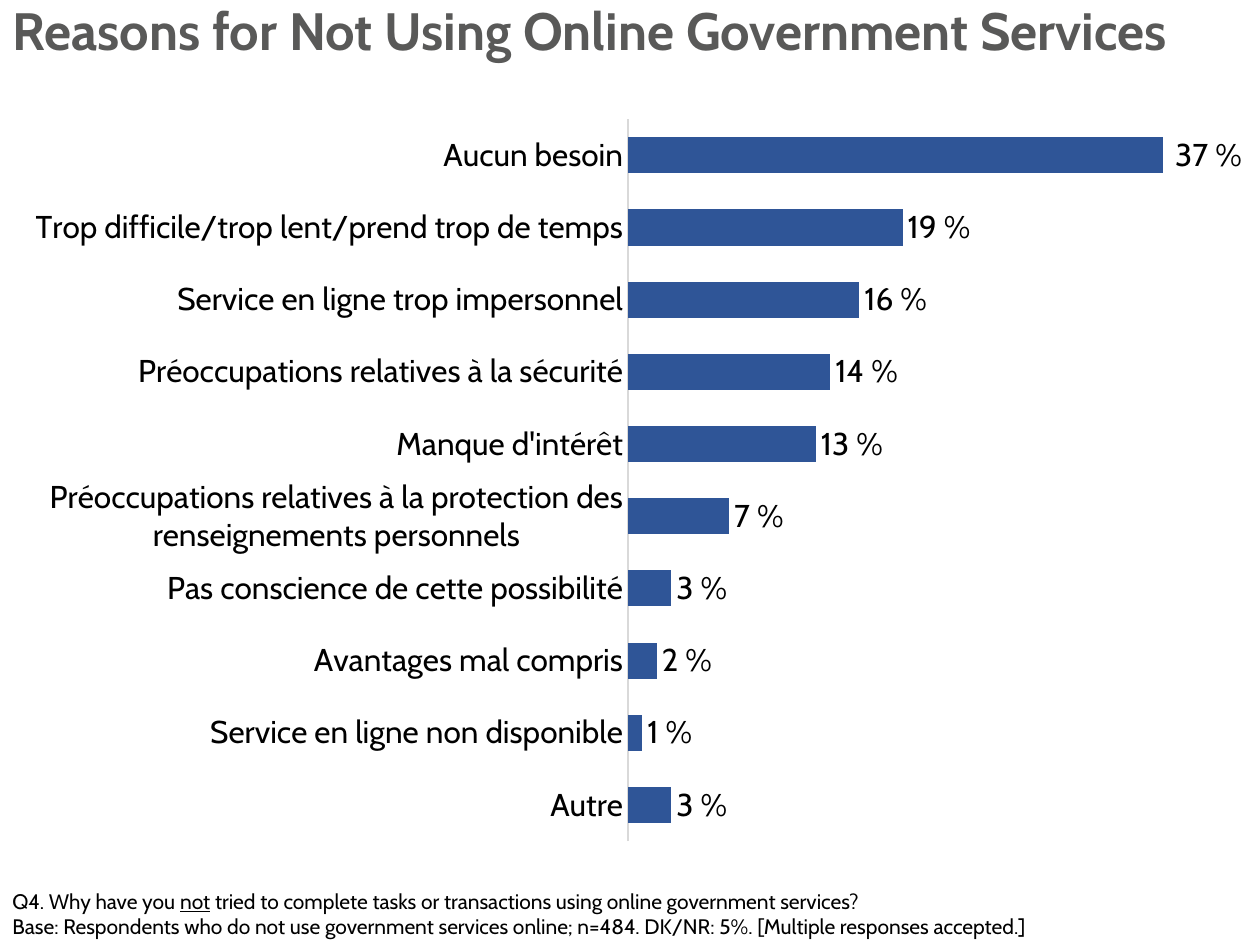
from lxml.etree import SubElement
from pptx import Presentation
from pptx.chart.data import CategoryChartData
from pptx.dml.color import RGBColor
from pptx.enum.chart import XL_CHART_TYPE, XL_LABEL_POSITION, XL_TICK_MARK
from pptx.enum.text import MSO_ANCHOR, MSO_AUTO_SIZE, PP_ALIGN
from pptx.oxml.ns import qn
from pptx.util import Cm, Pt

# Content
TITLE = "Reasons for Not Using Online Government Services"
REASONS = [  # bottom bar first: reason, share, label
    ("Autre", 0.03, "3 %"),
    ("Service en ligne non disponible", 0.01, "1 %"),
    ("Avantages mal compris", 0.02, "2 %"),
    ("Pas conscience de cette possibilité", 0.03, "3 %"),
    ("Préoccupations relatives à la protection des renseignements personnels", 0.07, "7 %"),
    ("Manque d'intérêt", 0.13, "13 %"),
    ("Préoccupations relatives à la sécurité", 0.14, "14 %"),
    ("Service en ligne trop impersonnel", 0.16, "16 %"),
    ("Trop difficile/trop lent/prend trop de temps", 0.19, "19 %"),
    ("Aucun besoin", 0.37, " 37 %"),
]
FOOTNOTE = [  # lines of (text, underlined)
    [("Q4. Why have you ", False), ("not", True),
     (" tried to complete tasks or transactions using online government services?", False)],
    [("Base: Respondents who do not use government services online; n=484. "
      "DK/NR: 5%. [Multiple responses accepted.]", False)],
]

FONT = "Cabin"
BLACK = RGBColor(0x00, 0x00, 0x00)
TITLE_GREY = RGBColor(0x59, 0x59, 0x58)
AXIS_GREY = RGBColor(0xD9, 0xD9, 0xD9)
BAR_BLUE = RGBColor(0x2F, 0x55, 0x97)
PLOT_LAYOUT = {"x": 0.5, "y": 0, "w": 0.47, "h": 1}


def format_font(font, size, color=BLACK, name=FONT, bold=False):
    font.name = name
    font.size = Pt(size)
    font.bold = bold
    font.color.rgb = color


def set_plot_layout(chart, fractions):
    plot_area = chart._chartSpace.find(".//" + qn("c:plotArea"))
    layout = plot_area.find(qn("c:layout"))
    if layout is None:
        layout = SubElement(plot_area, qn("c:layout"))
        plot_area.insert(0, layout)
    manual = SubElement(layout, qn("c:manualLayout"))
    settings = {"layoutTarget": "inner", "xMode": "edge", "yMode": "edge", **fractions}
    for tag, value in settings.items():
        SubElement(manual, qn("c:" + tag)).set("val", str(value))


presentation = Presentation()
presentation.slide_width = Cm(25.4)
presentation.slide_height = Cm(19.05)
slide = presentation.slides.add_slide(presentation.slide_layouts[5])

# Title
title = slide.shapes.title
title.left, title.top, title.width, title.height = Cm(0), Cm(0.05), Cm(25.4), Cm(1.27)
title.text_frame.text = TITLE
title.text_frame.auto_size = MSO_AUTO_SIZE.NONE
title.text_frame.vertical_anchor = MSO_ANCHOR.MIDDLE
paragraph = title.text_frame.paragraphs[0]
paragraph.alignment = PP_ALIGN.LEFT
paragraph.line_spacing = 0.9
format_font(paragraph.runs[0].font, 30, TITLE_GREY, bold=True)

# Bar chart
chart_data = CategoryChartData(number_format="0%")
chart_data.categories = [reason for reason, _, _ in REASONS]
chart_data.add_series("Series 1", [share for _, share, _ in REASONS])
chart = slide.shapes.add_chart(XL_CHART_TYPE.BAR_CLUSTERED, Cm(0.25), Cm(2.39),
                               Cm(24.82), Cm(14.58), chart_data).chart
chart.has_legend = False
chart.has_title = False
format_font(chart.font, 18, name="Arial")
set_plot_layout(chart, PLOT_LAYOUT)

category_axis = chart.category_axis
category_axis.major_tick_mark = XL_TICK_MARK.NONE
category_axis.minor_tick_mark = XL_TICK_MARK.NONE
category_axis.format.line.color.rgb = AXIS_GREY
category_axis.format.line.width = Pt(0.75)
format_font(category_axis.tick_labels.font, 18)

value_axis = chart.value_axis
value_axis.minimum_scale = 0
value_axis.maximum_scale = 0.4
value_axis.has_major_gridlines = False
value_axis.visible = False

plot = chart.plots[0]
plot.gap_width = 100
plot.vary_by_categories = False
series = plot.series[0]
series.format.fill.solid()
series.format.fill.fore_color.rgb = BAR_BLUE

# Bar labels
labels = series.data_labels
labels.show_value = True
labels.number_format = "0%"
labels.number_format_is_linked = False
labels.position = XL_LABEL_POSITION.OUTSIDE_END
format_font(labels.font, 18)
for index, (_, _, text) in enumerate(REASONS):
    label = series.points[index].data_label
    label.text_frame.text = text
    label.position = XL_LABEL_POSITION.OUTSIDE_END
    format_font(label.text_frame.paragraphs[0].runs[0].font, 18)

# Footnote
footnote = slide.shapes.add_textbox(Cm(0), Cm(17.78), Cm(25.4), Cm(1.27))
text_frame = footnote.text_frame
text_frame.word_wrap = True
text_frame.auto_size = MSO_AUTO_SIZE.SHAPE_TO_FIT_TEXT
for index, line in enumerate(FOOTNOTE):
    paragraph = text_frame.add_paragraph() if index else text_frame.paragraphs[0]
    for text, underlined in line:
        run = paragraph.add_run()
        run.text = text
        format_font(run.font, 12)
        run.font.underline = underlined

presentation.save("out.pptx")
